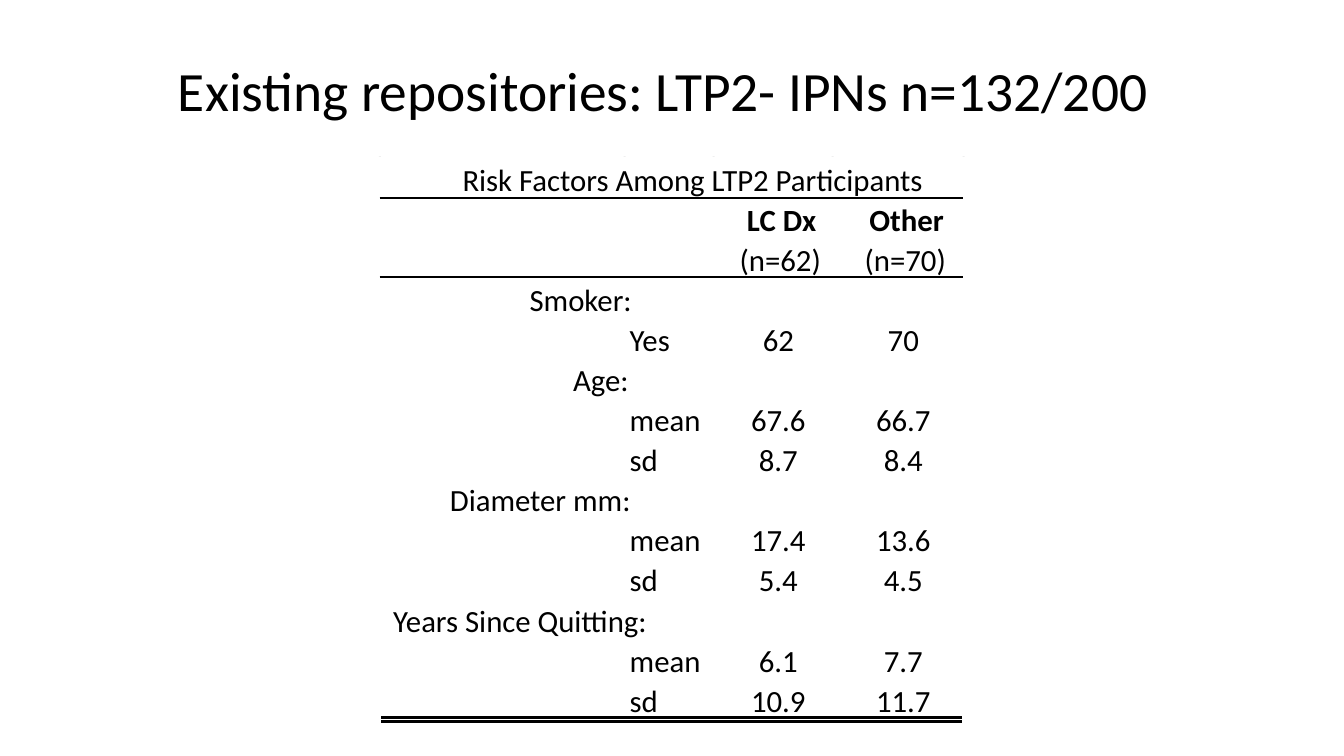
from itertools import accumulate

from lxml import etree
from pptx import Presentation
from pptx.dml.color import RGBColor
from pptx.enum.shapes import MSO_CONNECTOR, MSO_SHAPE
from pptx.enum.text import MSO_ANCHOR, MSO_AUTO_SIZE, PP_ALIGN
from pptx.oxml.ns import qn
from pptx.util import Cm, Pt

COLORS = {"ink": "000000", "paper": "FFFFFF", "tick": "D4D4D4"}
INK = RGBColor.from_string(COLORS["ink"])
NO_STYLE_NO_GRID = "{2D5ABB26-0587-4C30-8999-92F81FD0307C}"


def add_text(paragraph, text, size, align, bold=False):
    paragraph.alignment = align
    run = paragraph.add_run()
    run.text = text
    run.font.name = "Calibri"
    run.font.size = Pt(size)
    run.font.bold = bold
    run.font.color.rgb = INK


presentation = Presentation()
presentation.slide_width = Cm(33.87)
presentation.slide_height = Cm(19.05)
slide = presentation.slides.add_slide(presentation.slide_layouts[5])
slide.background.fill.solid()
slide.background.fill.fore_color.rgb = RGBColor.from_string(COLORS["paper"])

# Title
title = slide.shapes.title
title.left, title.top = Cm(4.24), Cm(0.76)
title.width, title.height = Cm(25.4), Cm(3.18)
title.text_frame.auto_size = MSO_AUTO_SIZE.NONE
title.text_frame.vertical_anchor = MSO_ANCHOR.MIDDLE
title.text_frame.margin_left = Cm(0.02)
title.text_frame.margin_right = Cm(0.48)
heading = title.text_frame.paragraphs[0]
heading.line_spacing = 0.9
add_text(heading, "Existing repositories: LTP2- IPNs n=132/200", 39.6, PP_ALIGN.CENTER)

# Risk factor rows: category, measure, LC Dx, Other
risk_factors = [
    ("Risk Factors Among LTP2 Participants", "", "", ""),
    ("", "", "LC Dx", "Other"),
    ("", "", "(n=62)", "(n=70)"),
    ("Smoker:", "", "", ""),
    ("", "Yes", "62", "70"),
    ("Age:", "", "", ""),
    ("", "mean", "67.6", "66.7"),
    ("", "sd", "8.7", "8.4"),
    ("Diameter mm:", "", "", ""),
    ("", "mean", "17.4", "13.6"),
    ("", "sd", "5.4", "4.5"),
    ("Years Since Quitting:", "", "", ""),
    ("", "mean", "6.1", "7.7"),
    ("", "sd", "10.9", "11.7"),
]
category_indents = {"Smoker:": 2.18, "Age:": 2.26, "Diameter mm:": 2.21,
                    "Years Since Quitting:": 1.8}
column_widths = [6.17, 2.24, 3.0, 3.3]
alignments = [PP_ALIGN.RIGHT, PP_ALIGN.LEFT, PP_ALIGN.CENTER, PP_ALIGN.CENTER]
caption_row, group_row, size_row = 0, 1, 2
left, top, row_height = 9.57, 4.03, 1.01
table_width = sum(column_widths)

table_frame = slide.shapes.add_table(
    len(risk_factors), len(column_widths), Cm(left), Cm(top),
    Cm(table_width), Cm(row_height * len(risk_factors)))
table = table_frame.table
table.first_row = table.horz_banding = False
for style_id in table_frame.element.iter(qn("a:tableStyleId")):
    style_id.text = NO_STYLE_NO_GRID
for column, width in zip(table.columns, column_widths):
    column.width = Cm(width)

for r, factors in enumerate(risk_factors):
    table.rows[r].height = Cm(row_height)
    value_margin = {group_row: 0.2, size_row: 0.13}.get(r, 0.03)
    left_margins = [0, 0.13, value_margin, value_margin]
    for c, text in enumerate(factors):
        cell = table.cell(r, c)
        cell.fill.background()
        cell.margin_left = Cm(left_margins[c])
        cell.margin_right = cell.margin_bottom = 0
        cell.margin_top = Cm(0.05)
        if text:
            align = PP_ALIGN.CENTER if r == caption_row else alignments[c]
            add_text(cell.text_frame.paragraphs[0], text, 22, align, bold=r == group_row)

    # Caption and category names run across neighbouring columns
    category = table.cell(r, 0)
    if r == caption_row:
        category.merge(table.cell(r, 3))
        category.margin_left = Cm(0.94)
    elif factors[0]:
        category.merge(table.cell(r, 1))
        category.margin_right = Cm(category_indents[factors[0]])

# Faint ticks at the column edges above the table
for offset in accumulate(column_widths, initial=0):
    tick = slide.shapes.add_shape(
        MSO_SHAPE.RECTANGLE, Cm(left + offset - 0.02), Cm(3.94), Cm(0.05), Cm(0.01))
    tick.shadow.inherit = False
    tick.fill.solid()
    tick.fill.fore_color.rgb = RGBColor.from_string(COLORS["tick"])
    tick.line.fill.background()

# Rules below caption and heading, double rule at the end
for y, inset in [(4.98, 0), (6.99, 0), (18.08, 0.04), (18.18, 0.04)]:
    rule = slide.shapes.add_connector(
        MSO_CONNECTOR.STRAIGHT, Cm(left + inset), Cm(y),
        Cm(left + table_width - inset), Cm(y))
    rule.line.color.rgb = INK
    rule.line.width = Pt(1.5)
    etree.SubElement(rule.element.spPr, qn("a:effectLst"))

presentation.save("out.pptx")
